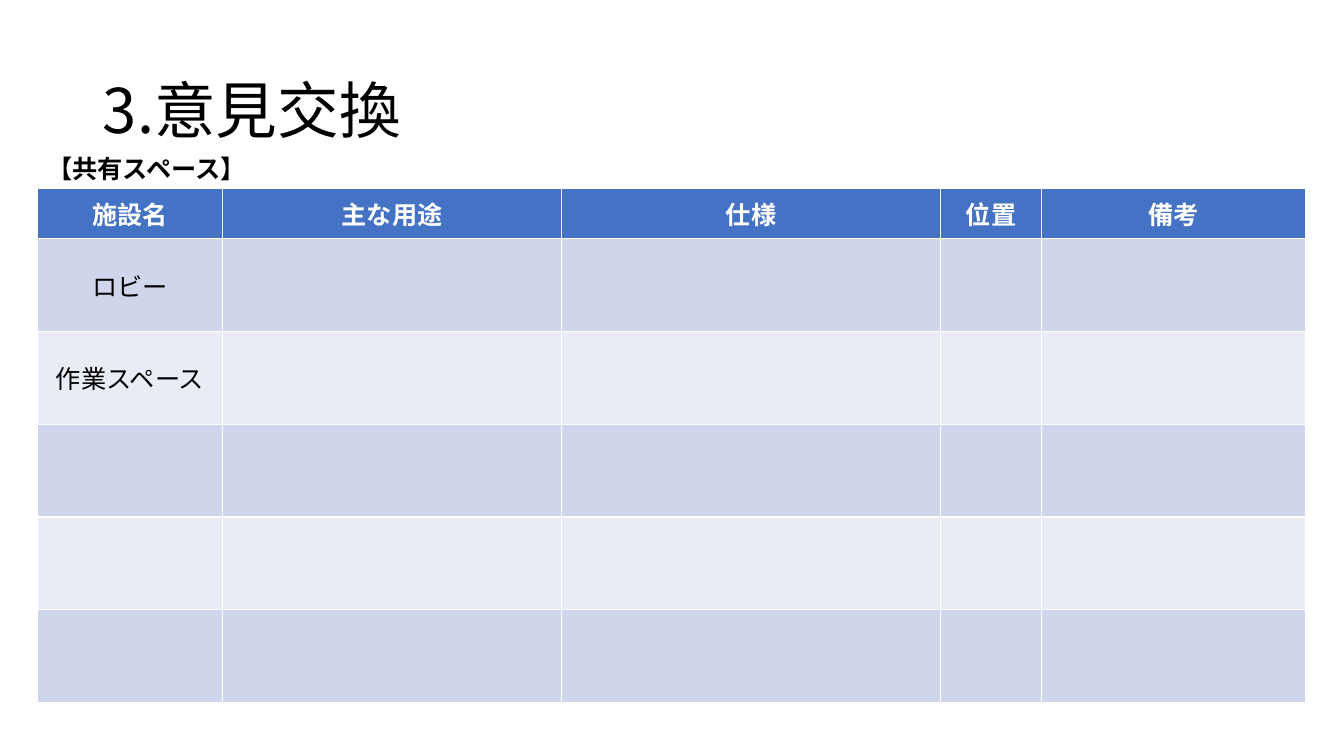
"""Build the opinion-exchange slide with its table of shared spaces."""
from lxml.etree import SubElement
from pptx import Presentation
from pptx.dml.color import RGBColor
from pptx.enum.text import MSO_ANCHOR as Anchor, MSO_AUTO_SIZE as AutoSize, PP_ALIGN as Align
from pptx.oxml.ns import qn
from pptx.util import Inches, Pt

FONT = "Noto Sans CJK JP"
BLACK = RGBColor(0x00, 0x00, 0x00)
WHITE = RGBColor(0xFF, 0xFF, 0xFF)
HEADER_BLUE = RGBColor(0x44, 0x72, 0xC4)
BANDS = [RGBColor(0xCF, 0xD5, 0xEA), RGBColor(0xE9, 0xEB, 0xF5)]

HEADERS = ["施設名", "主な用途", "仕様", "位置", "備考"]
FACILITIES = ["ロビー", "作業スペース", "", "", ""]
COL_WIDTHS = [1.84, 3.36, 3.76, 1, 2.62]
HEADER_HEIGHT, ROW_HEIGHT = 0.5, 0.92


def write(tf, text, size, color=BLACK, bold=False, align=Align.LEFT):
    tf.text = text
    p = tf.paragraphs[0]
    p.alignment = align
    p.font.size = Pt(size)
    p.font.bold = bold
    p.font.color.rgb = color
    p.font.name = FONT
    SubElement(p._p.pPr.find(qn("a:defRPr")), qn("a:ea"), typeface=FONT)
    return p


def add_title(s, text):
    sp = s.shapes.title
    sp.left, sp.top = Inches(0.92), Inches(0.4)
    sp.width, sp.height = Inches(11.5), Inches(1.45)
    tf = sp.text_frame
    tf.auto_size = AutoSize.NONE
    tf.vertical_anchor = Anchor.MIDDLE
    write(tf, text, 44).line_spacing = 0.9


def add_table_label(s, text):
    sp = s.shapes.add_textbox(Inches(0.37), Inches(1.47), Inches(6.67), Inches(0.4))
    tf = sp.text_frame
    tf.word_wrap = True
    tf.auto_size = AutoSize.SHAPE_TO_FIT_TEXT
    write(tf, text, 18, bold=True)


def fill_cell(cell, text, fill, color=BLACK, bold=False):
    cell.fill.solid()
    cell.fill.fore_color.rgb = fill
    cell.vertical_anchor = Anchor.MIDDLE
    write(cell.text_frame, text, 18, color, bold, Align.CENTER)


def add_facility_table(s):
    height = HEADER_HEIGHT + ROW_HEIGHT * len(FACILITIES)
    frame = s.shapes.add_table(len(FACILITIES) + 1, len(HEADERS), Inches(0.37), Inches(1.87),
                               Inches(sum(COL_WIDTHS)), Inches(height))
    table = frame.table
    for col, width in zip(table.columns, COL_WIDTHS):
        col.width = Inches(width)
    for i, row in enumerate(table.rows):
        row.height = Inches(ROW_HEIGHT if i else HEADER_HEIGHT)
    for j, header in enumerate(HEADERS):
        fill_cell(table.cell(0, j), header, HEADER_BLUE, WHITE, True)
    for i, facility in enumerate(FACILITIES):
        for j in range(len(HEADERS)):
            fill_cell(table.cell(i + 1, j), "" if j else facility, BANDS[i % 2])


def main():
    prs = Presentation()
    prs.slide_width, prs.slide_height = Inches(13.33), Inches(7.5)
    s = prs.slides.add_slide(prs.slide_layouts[5])
    add_title(s, "3.意見交換")
    add_facility_table(s)
    add_table_label(s, "【共有スペース】")
    prs.save("out.pptx")


if __name__ == "__main__":
    main()
